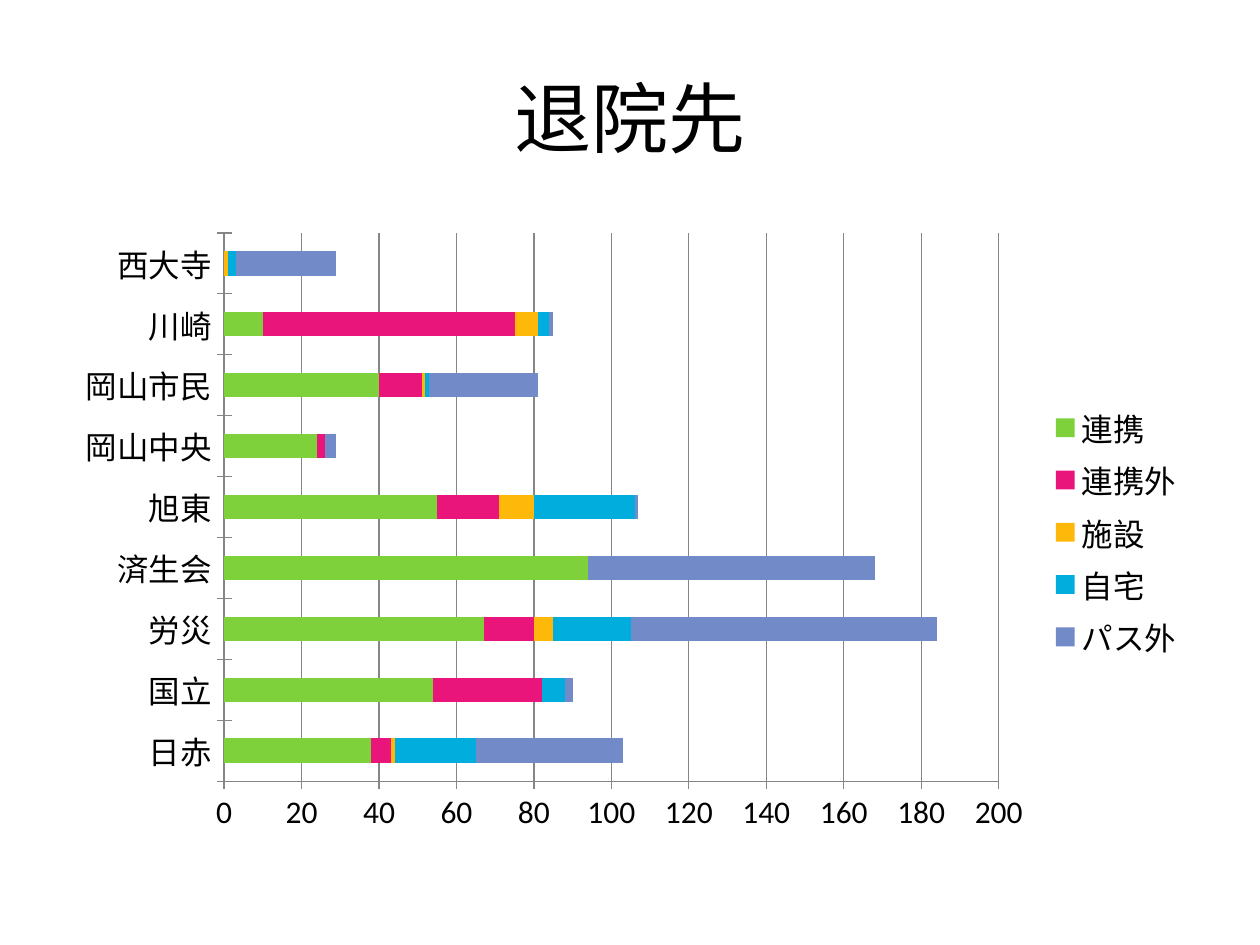
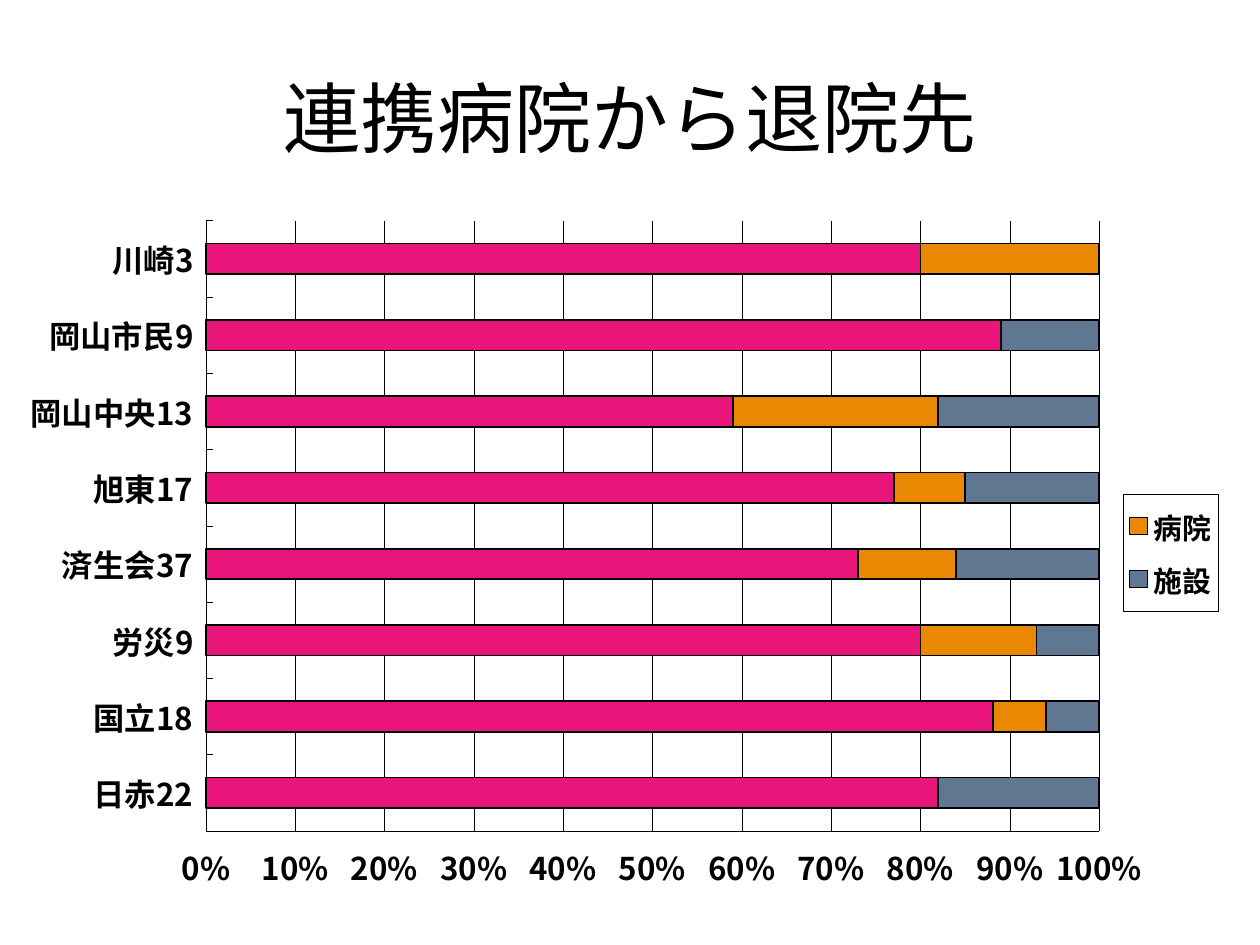
from dataclasses import dataclass

from lxml import etree
from pptx import Presentation
from pptx.chart.data import CategoryChartData
from pptx.dml.color import RGBColor
from pptx.enum.chart import (XL_CHART_TYPE, XL_LEGEND_POSITION,
                             XL_TICK_LABEL_POSITION, XL_TICK_MARK)
from pptx.enum.text import MSO_ANCHOR, PP_ALIGN
from pptx.oxml import parse_xml
from pptx.oxml.ns import nsdecls, qn
from pptx.util import Pt

STACKED = XL_CHART_TYPE.BAR_STACKED
STACKED_100 = XL_CHART_TYPE.BAR_STACKED_100
RIGHT = XL_LEGEND_POSITION.RIGHT
LABELS_LOW = XL_TICK_LABEL_POSITION.LOW
TICK_NONE, TICK_CROSS, TICK_INSIDE = (
    XL_TICK_MARK.NONE, XL_TICK_MARK.CROSS, XL_TICK_MARK.INSIDE)
CENTER, MIDDLE = PP_ALIGN.CENTER, MSO_ANCHOR.MIDDLE


@dataclass(frozen=True)
class Theme:
    font: str = "Calibri"
    bold_font: str = "Noto Sans CJK JP"
    ink: str = "000000"
    grey: str = "868686"
    green: str = "7FD13B"
    pink: str = "EA157A"
    yellow: str = "FEB80A"
    cyan: str = "00ADDC"
    violet: str = "738AC8"
    orange: str = "EB8803"
    slate: str = "5F7791"
    title_size: float = 44
    chart_size: float = 18
    bold_size: float = 17.9
    legend_size: float = 16.5


T = Theme()
TITLE_BOX = (36, 21.6, 648, 90)

HOSPITALS = ["日赤", "国立", "労災", "済生会", "旭東", "岡山中央", "岡山市民", "川崎", "西大寺"]
DESTINATIONS = [
    ("連携", T.green, [38, 54, 67, 94, 55, 24, 40, 10, None]),
    ("連携外", T.pink, [5, 28, 13, 0, 16, 2, 11, 65, None]),
    ("施設", T.yellow, [1, 0, 5, 0, 9, 0, 1, 6, 1]),
    ("自宅", T.cyan, [21, 6, 20, 0, 26, 0, 1, 3, 2]),
    ("パス外", T.violet, [38, 2, 79, 74, 1, 3, 28, 1, 26]),
]
PARTNER_COUNTS = [22, 18, 9, 37, 17, 13, 9, 3]
PARTNER_DESTINATIONS = [
    ("自宅", T.pink, [82, 89, 80, 73, 77, 59, 89, 80]),
    ("病院", T.orange, [0, 6, 13, 11, 8, 23, 0, 20]),
    ("施設", T.slate, [18, 6, 7, 16, 15, 18, 11, 0]),
]


def rgb(color):
    return RGBColor.from_string(color)


def set_font(font, name, size, color=T.ink, bold=False):
    font.name, font.size, font.bold = name, Pt(size), bold
    font.color.rgb = rgb(color)


def set_line(line, color, width):
    line.color.rgb = rgb(color)
    line.width = Pt(width)


def add_text(s, box, text, size, font=T.font, color=T.ink, align=CENTER, anchor=MIDDLE):
    tf = s.shapes.add_textbox(*map(Pt, box)).text_frame
    tf.word_wrap, tf.vertical_anchor = True, anchor
    p = tf.paragraphs[0]
    p.alignment = align
    r = p.add_run()
    r.text = text
    set_font(r.font, font, size, color)


def manual_layout(x, y, w, h, inner=False):
    """Layout element, in fractions of the chart space."""
    layout = etree.Element(qn("c:layout"))
    manual = etree.SubElement(layout, qn("c:manualLayout"))
    values = [("xMode", "edge"), ("yMode", "edge"), ("x", x), ("y", y), ("w", w), ("h", h)]
    if inner:
        values.insert(0, ("layoutTarget", "inner"))
    for tag, value in values:
        etree.SubElement(manual, qn(f"c:{tag}")).set("val", str(value))
    return layout


def set_plot_layout(chart, *box):
    area = chart._chartSpace.chart.plotArea
    for old in area.findall(qn("c:layout")):
        area.remove(old)
    area.insert(0, manual_layout(*box, inner=True))


def frame_legend(legend, box, hidden_entry):
    """Place and outline the legend, leaving one series out of it."""
    el = legend._element
    for old in el.findall(qn("c:layout")):
        el.remove(old)
    entry = etree.Element(qn("c:legendEntry"))
    etree.SubElement(entry, qn("c:idx")).set("val", str(hidden_entry))
    etree.SubElement(entry, qn("c:delete")).set("val", "1")
    el.find(qn("c:legendPos")).addnext(entry)
    entry.addnext(manual_layout(*box))
    el.find(qn("c:overlay")).addnext(parse_xml(
        f'<c:spPr {nsdecls("c", "a")}><a:solidFill><a:srgbClr val="FFFFFF"/></a:solidFill>'
        f'<a:ln w="{Pt(0.25)}"><a:solidFill><a:srgbClr val="{T.ink}"/></a:solidFill></a:ln>'
        '</c:spPr>'))


def add_bars(s, box, kind, cats, series, font, size, bold=False, tick=TICK_CROSS,
             axis_line=(T.grey, 0.75), bar_line=None, number_format="General"):
    data = CategoryChartData()
    data.categories = cats
    for name, _, values in series:
        data.add_series(name, values)
    chart = s.shapes.add_chart(kind, *map(Pt, box), data).chart
    chart.has_title = False
    set_font(chart.font, font, size, bold=bold)

    plot = chart.plots[0]
    plot.gap_width, plot.overlap, plot.vary_by_categories = 150, 100, False
    for ser, (_, color, _) in zip(plot.series, series):
        ser.format.fill.solid()
        ser.format.fill.fore_color.rgb = rgb(color)
        if bar_line:
            set_line(ser.format.line, *bar_line)
        else:
            ser.format.line.fill.background()

    for axis in (chart.category_axis, chart.value_axis):
        axis.major_tick_mark, axis.minor_tick_mark = tick, TICK_NONE
        axis.tick_label_position = LABELS_LOW
        set_font(axis.tick_labels.font, font, size, bold=bold)
        set_line(axis.format.line, *axis_line)
    chart.category_axis.has_major_gridlines = False
    values = chart.value_axis
    values.has_major_gridlines = True
    set_line(values.major_gridlines.format.line, *axis_line)
    values.tick_labels.number_format = number_format
    values.tick_labels.number_format_is_linked = False

    chart.has_legend = True
    chart.legend.position = RIGHT
    chart.legend.include_in_layout = False
    return chart


def add_titled_slide(prs, title):
    s = prs.slides.add_slide(prs.slide_layouts[6])
    add_text(s, TITLE_BOX, title, T.title_size)
    return s


def destinations_slide(prs):
    s = add_titled_slide(prs, "退院先")
    chart = add_bars(s, (36, 126, 648, 356.4), STACKED, HOSPITALS, DESTINATIONS,
                     T.font, T.chart_size)
    axis = chart.value_axis
    axis.minimum_scale, axis.maximum_scale, axis.major_unit = 0, 200, 20
    set_font(chart.legend.font, T.font, T.chart_size)


def partner_slide(prs):
    s = add_titled_slide(prs, "連携病院から退院先")
    cats = [f"{name}{count}" for name, count in zip(HOSPITALS, PARTNER_COUNTS)]
    chart = add_bars(s, (0, 126, 717.84, 393.84), STACKED_100, cats, PARTNER_DESTINATIONS,
                     T.bold_font, T.bold_size, bold=True, tick=TICK_INSIDE,
                     axis_line=(T.ink, 0.25), bar_line=(T.ink, 1), number_format="0%")
    set_plot_layout(chart, 0.164, 0, 0.711, 0.886)
    set_font(chart.legend.font, T.bold_font, T.legend_size, bold=True)
    frame_legend(chart.legend, (0.894, 0.397, 0.076, 0.17), hidden_entry=2)


def main():
    prs = Presentation()
    prs.slide_width, prs.slide_height = Pt(720), Pt(540)
    destinations_slide(prs)
    partner_slide(prs)
    prs.save("out.pptx")


if __name__ == "__main__":
    main()
